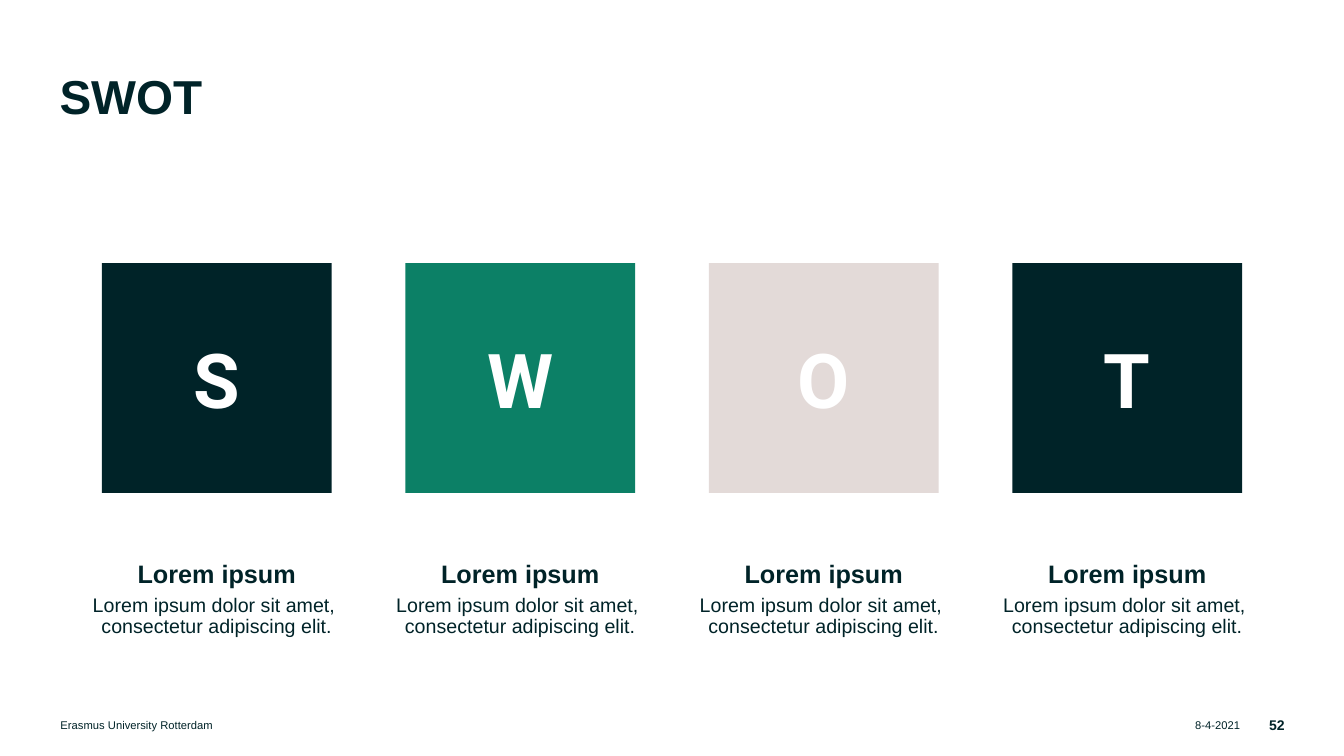
from pptx import Presentation
from pptx.dml.color import RGBColor
from pptx.enum.shapes import MSO_SHAPE
from pptx.enum.text import MSO_ANCHOR, PP_ALIGN
from pptx.util import Inches, Pt

DARK = RGBColor(0x00, 0x23, 0x28)
GREEN = RGBColor(0x0C, 0x80, 0x66)
SAND = RGBColor(0xE3, 0xDA, 0xD8)
WHITE = RGBColor(0xFF, 0xFF, 0xFF)
LEFT, CENTER, RIGHT = PP_ALIGN.LEFT, PP_ALIGN.CENTER, PP_ALIGN.RIGHT
TOP, MIDDLE, BOTTOM = MSO_ANCHOR.TOP, MSO_ANCHOR.MIDDLE, MSO_ANCHOR.BOTTOM

TILE_SIZE = 2.28
CAPTION_WIDTH = 2.56
COLUMN_STEP = 3.01
FIRST_CENTER = 2.15


def set_frame(shape, anchor, margin=0):
    frame = shape.text_frame
    frame.word_wrap = True
    frame.vertical_anchor = anchor
    frame.margin_left = frame.margin_right = Inches(margin)
    frame.margin_top = frame.margin_bottom = Inches(margin)
    return frame


def add_run(paragraph, text, size, bold=False, color=DARK, name="Arial"):
    run = paragraph.add_run()
    run.text = text
    run.font.size = Pt(size)
    run.font.bold = bold
    run.font.name = name
    run.font.color.rgb = color


presentation = Presentation()
presentation.slide_width = Inches(13.33)
presentation.slide_height = Inches(7.5)
slide = presentation.slides.add_slide(presentation.slide_layouts[5])

# Title
title = slide.shapes.title
title.left, title.top = Inches(0.59), Inches(0.79)
title.width, title.height = Inches(12.15), Inches(0.78)
paragraph = set_frame(title, TOP).paragraphs[0]
paragraph.alignment = LEFT
paragraph.line_spacing = Pt(32)
add_run(paragraph, "SWOT", 34, bold=True)

# Footer
for text, left, width, alignment, size, bold in (
    ("8-4-2021", 11.54, 0.76, RIGHT, 8, False),
    ("Erasmus University Rotterdam", 0.6, 10.79, LEFT, 8, False),
    ("52", 12.45, 0.29, RIGHT, 10, True),
):
    box = slide.shapes.add_textbox(Inches(left), Inches(7.12), Inches(width), Inches(0.14))
    paragraph = set_frame(box, MIDDLE).paragraphs[0]
    paragraph.alignment = alignment
    add_run(paragraph, text, size, bold)

# Tiles with captions
for column, (letter, fill) in enumerate(zip("SWOT", (DARK, GREEN, SAND, DARK))):
    center = FIRST_CENTER + column * COLUMN_STEP

    tile = slide.shapes.add_shape(
        MSO_SHAPE.RECTANGLE, Inches(center - TILE_SIZE / 2), Inches(2.61),
        Inches(TILE_SIZE), Inches(TILE_SIZE))
    tile.shadow.inherit = False
    tile.fill.solid()
    tile.fill.fore_color.rgb = fill
    tile.line.fill.background()
    paragraph = set_frame(tile, MIDDLE, 0.16).paragraphs[0]
    paragraph.alignment = CENTER
    add_run(paragraph, letter, 54, bold=True, color=WHITE, name="Roboto")

    caption = slide.shapes.add_textbox(
        Inches(center - CAPTION_WIDTH / 2), Inches(5.55),
        Inches(CAPTION_WIDTH), Inches(0.78))
    frame = set_frame(caption, BOTTOM)
    heading, body = frame.paragraphs[0], frame.add_paragraph()
    for paragraph in (heading, body):
        paragraph.alignment = CENTER
        paragraph.line_spacing = 0.9
    body.space_before = Pt(5)
    add_run(heading, "Lorem ipsum", 18, bold=True)
    add_run(body, "Lorem ipsum dolor sit amet, ", 14)
    body.add_line_break()
    add_run(body, "consectetur adipiscing elit.", 14)

presentation.save("out.pptx")
